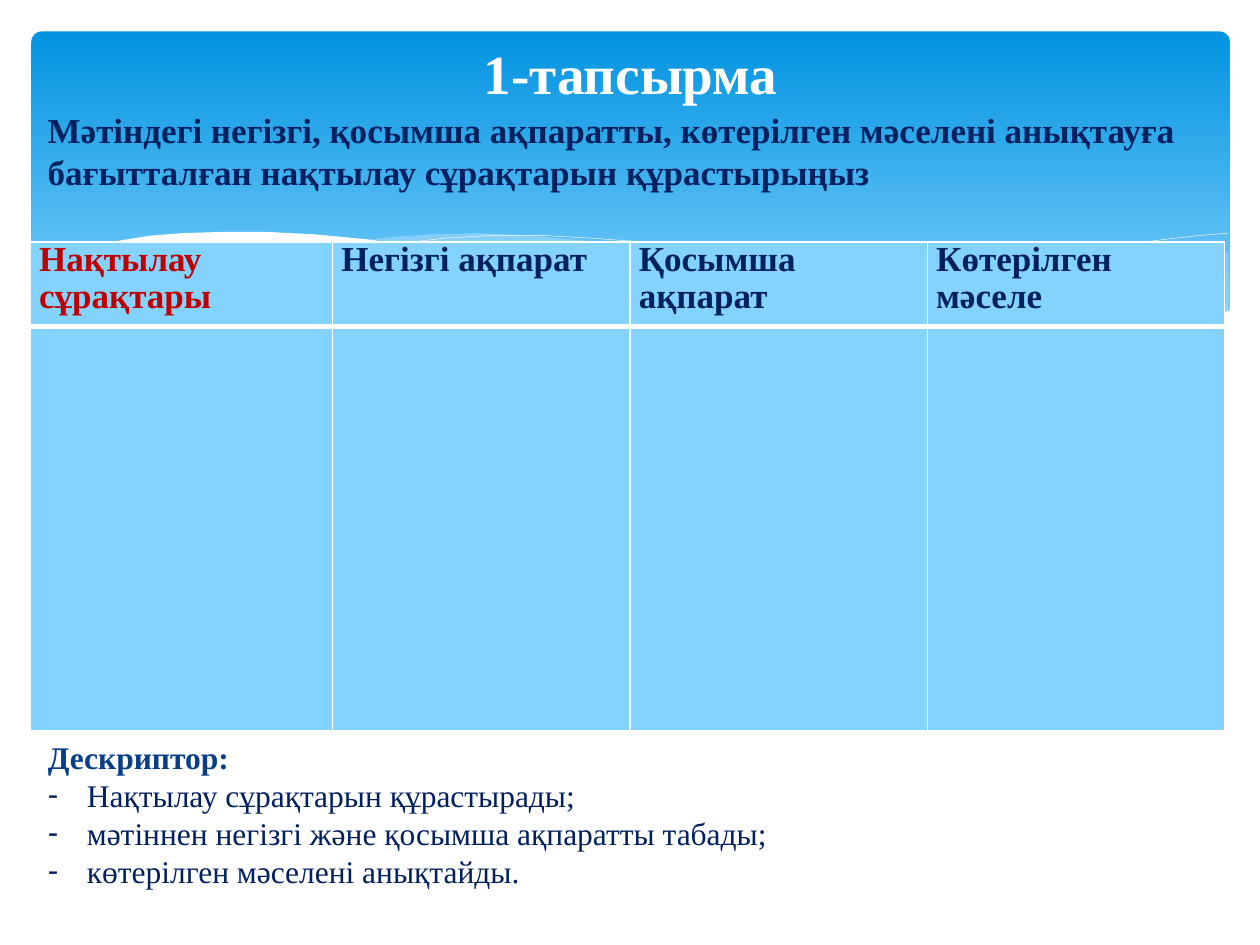
from lxml.etree import SubElement
from pptx import Presentation
from pptx.dml.color import RGBColor
from pptx.enum.shapes import MSO_SHAPE
from pptx.enum.text import MSO_ANCHOR, MSO_AUTO_SIZE, PP_ALIGN
from pptx.oxml.ns import qn
from pptx.util import Pt

PX = 9144
FONT = "Times New Roman"
NAVY = "002060"
SKY = "83D3FE"
WHITE = "FFFFFF"
HEADERS = ["Нақтылау сұрақтары", "Негізгі ақпарат", "Қосымша ақпарат", "Көтерілген мәселе"]
CRITERIA = [
    "Нақтылау сұрақтарын құрастырады;",
    "мәтіннен негізгі және қосымша ақпаратты табады;",
    "көтерілген мәселені анықтайды.",
]

RIGHT_WAVE = [(314, 0), (287, 4), (237, 16), (144, 37), (68, 53), (0, 65), (58, 72),
              (108, 77), (163, 77), (220, 73), (267, 63), (314, 47)]
MIDDLE_WAVE = [(606, 88), (521, 75), (420, 55), (343, 37), (283, 23), (228, 13), (179, 6),
               (134, 2), (94, 0), (58, 1), (27, 3), (0, 6), (56, 14), (118, 26), (163, 37),
               (244, 55), (315, 70), (379, 81), (436, 89), (487, 92), (532, 93), (571, 92)]
LONG_LINE = [(0, 8), (19, 5), (44, 2), (78, 0), (124, 0), (160, 2), (201, 5), (247, 10),
             (299, 17), (356, 26), (418, 39), (486, 54), (560, 74), (598, 85)]
RISING_LINE = [(0, 72), (59, 56), (107, 44), (163, 31), (223, 19), (268, 11), (311, 5),
               (338, 2), (362, 0)]
WHITE_WAVE = [(954, 62), (917, 75), (876, 85), (827, 91), (770, 92), (703, 88), (625, 78),
              (532, 61), (424, 36), (368, 23), (317, 13), (269, 6), (227, 2), (188, 0),
              (154, 0), (123, 1), (96, 3), (72, 7), (53, 11), (36, 15), (23, 19), (13, 23),
              (6, 26), (0, 29), (0, 145), (954, 145)]


def px(value):
    return round(value * PX)


def color(value):
    return RGBColor.from_string(value)


def style(paragraph, size, hex_color, bold=True):
    font = paragraph.font
    font.name = FONT
    font.size = Pt(size)
    font.bold = bold
    font.color.rgb = color(hex_color)


def place(shape, left, top, width, height):
    shape.left, shape.top = px(left), px(top)
    shape.width, shape.height = px(width), px(height)


def add_wave(slide, left, top, points, fill=None, opacity=100):
    start, *rest = [(left + x, top + y) for x, y in points]
    builder = slide.shapes.build_freeform(*start, scale=PX)
    builder.add_line_segments(rest, close=fill is not None)
    shape = builder.convert_to_shape()
    shape.shadow.inherit = False
    if fill is None:
        shape.fill.background()
        shape.line.color.rgb = color(WHITE)
        shape.line.width = Pt(0.25)
        return
    shape.line.fill.background()
    shape.fill.solid()
    shape.fill.fore_color.rgb = color(fill)
    if opacity < 100:
        fill_color = shape.fill._xPr.find(qn("a:solidFill"))[0]
        SubElement(fill_color, qn("a:alpha"), val=str(opacity * 1000))


def add_banner(slide, left, top, width, height):
    panel = slide.shapes.add_shape(
        MSO_SHAPE.ROUNDED_RECTANGLE, px(left), px(top), px(width), px(height))
    panel.adjustments[0] = 0.03
    panel.shadow.inherit = False
    panel.line.fill.background()
    panel.fill.gradient()
    panel.fill.gradient_angle = 270
    for stop, position, shade in zip(panel.fill.gradient_stops, (0, 0.9), ("0293E0", SKY)):
        stop.position = position
        stop.color.rgb = color(shade)
    add_wave(slide, left + 636, top + 175, RIGHT_WAVE, "C6E7FC", 29)
    add_wave(slide, left + 261, top + 160, MIDDLE_WAVE, "C6E7FC", 40)
    add_wave(slide, left + 284, top + 162, LONG_LINE)
    add_wave(slide, left + 588, top + 160, RISING_LINE)
    add_wave(slide, left - 2, top + 159, WHITE_WAVE, WHITE)


def fill_title(slide, left, top, width, height):
    title = slide.shapes.title
    place(title, left, top, width, height)
    frame = title.text_frame
    frame.text = "1-тапсырма"
    frame.auto_size = MSO_AUTO_SIZE.NONE
    frame.vertical_anchor = MSO_ANCHOR.MIDDLE
    paragraph = frame.paragraphs[0]
    paragraph.alignment = PP_ALIGN.CENTER
    style(paragraph, 31.5, WHITE)
    slide.shapes._spTree.append(title._element)


def fill_descriptor(slide, left, top, width, height):
    body = slide.placeholders[1]
    place(body, left, top, width, height)
    frame = body.text_frame
    frame.text = "\n".join(["Дескриптор:"] + CRITERIA)
    frame.auto_size = MSO_AUTO_SIZE.NONE
    for index, paragraph in enumerate(frame.paragraphs):
        is_item = index > 0
        style(paragraph, 18, NAVY if is_item else "073E87", not is_item)
        paragraph.space_before = Pt(0)
        properties = paragraph._p.get_or_add_pPr()
        indent = px(31) if is_item else 0
        properties.set("marL", str(indent))
        properties.set("indent", str(-indent))
        if is_item:
            SubElement(properties, qn("a:buChar"), char="-")
        else:
            SubElement(properties, qn("a:buNone"))
    slide.shapes._spTree.append(body._element)


def format_cell(cell, bottom_width):
    cell.fill.solid()
    cell.fill.fore_color.rgb = color(SKY)
    cell.margin_left = cell.margin_right = px(7)
    cell.margin_top = cell.margin_bottom = 0
    properties = cell._tc.get_or_add_tcPr()
    for index, (side, width) in enumerate(
            [("lnL", 1), ("lnR", 1), ("lnT", 1), ("lnB", bottom_width)]):
        border = SubElement(properties, qn(f"a:{side}"), w=str(Pt(width)))
        SubElement(SubElement(border, qn("a:solidFill")), qn("a:srgbClr"), val=WHITE)
        properties.insert(index, border)


def add_question_table(slide, left, top, width, height):
    header_height = 67
    table = slide.shapes.add_table(
        2, len(HEADERS), px(left), px(top), px(width), px(height)).table
    table.rows[0].height = px(header_height)
    table.rows[1].height = px(height - header_height)
    for index, header in enumerate(HEADERS):
        table.columns[index].width = px(240 if index == 0 else (width - 240) / 3)
        cell = table.cell(0, index)
        cell.text = header
        paragraph = cell.text_frame.paragraphs[0]
        paragraph.line_spacing = 0.95
        style(paragraph, 20, "C00000" if index == 0 else NAVY)
        format_cell(cell, 3)
        format_cell(table.cell(1, index), 1)


def add_task(slide, left, top, width, height):
    frame = slide.shapes.add_textbox(px(left), px(top), px(width), px(height)).text_frame
    frame.word_wrap = True
    frame.text = ("Мәтіндегі негізгі, қосымша ақпаратты, көтерілген мәселені анықтауға "
                  "бағытталған нақтылау сұрақтарын құрастырыңыз")
    style(frame.paragraphs[0], 20, NAVY)


def main():
    presentation = Presentation()
    presentation.slide_width, presentation.slide_height = px(1000), px(750)
    slide = presentation.slides.add_slide(presentation.slide_layouts[1])
    add_banner(slide, 25, 25, 951, 270)
    fill_title(slide, 51, 32, 899, 51)
    fill_descriptor(slide, 28, 581, 888, 131)
    add_question_table(slide, 24, 192, 948, 388)
    add_task(slide, 28, 81, 945, 77)
    presentation.save("out.pptx")


if __name__ == "__main__":
    main()
